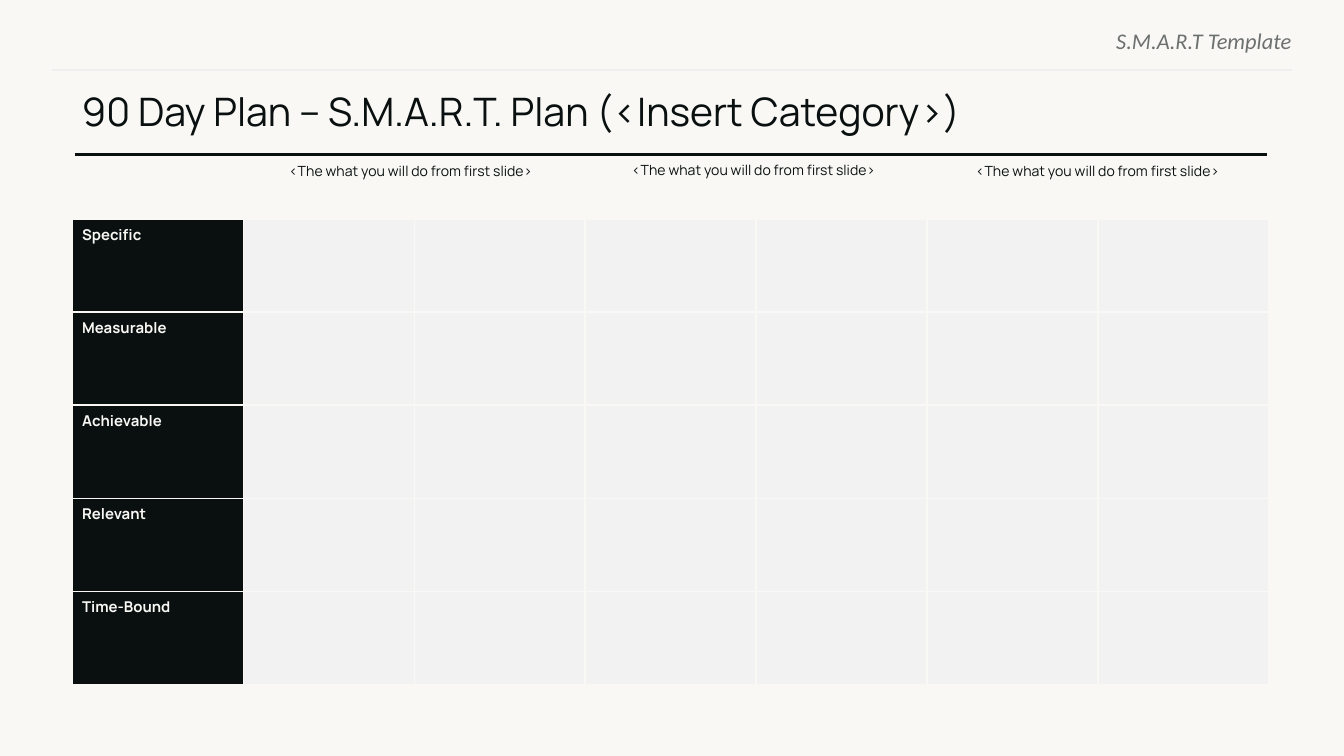
from lxml import etree
from pptx import Presentation
from pptx.dml.color import RGBColor
from pptx.enum.shapes import MSO_CONNECTOR
from pptx.enum.text import MSO_ANCHOR, PP_ALIGN
from pptx.oxml.ns import qn
from pptx.util import Cm, Pt

# Content
HEADER = "S.M.A.R.T Template"
TITLE = "90 Day Plan – S.M.A.R.T. Plan (<Insert Category>)"
GOAL = "<The what you will do from first slide>"
GOAL_BOXES = [  # left, top, width in cm
    (4.55, 2.95, 6.43),
    (10.97, 2.92, 6.55),
    (17.53, 2.95, 6.43),
]
CRITERIA = ["Specific", "Measurable", "Achievable", "Relevant", "Time-Bound"]

# Style
COLORS = {
    "paper": "F9F8F5",
    "ink": "09100F",
    "grey": "6C706F",
    "rule": "EFEFEF",
    "cell": "F2F2F2",
}
BODY_FONT, HEADER_FONT = "Manrope", "Calibri"
LEFT, CENTER, RIGHT = PP_ALIGN.LEFT, PP_ALIGN.CENTER, PP_ALIGN.RIGHT
TOP, MIDDLE = MSO_ANCHOR.TOP, MSO_ANCHOR.MIDDLE
STRAIGHT = MSO_CONNECTOR.STRAIGHT

# Table grid in cm
TABLE_LEFT, TABLE_TOP = 1.37, 4.14
COLUMN_COUNT, COLUMN_WIDTH, ROW_HEIGHT = 7, 3.23, 1.76


def color(name):
    return RGBColor.from_string(COLORS[name])


def style_text(paragraph, size, color_name, font=BODY_FONT, bold=False, italic=False):
    for run in paragraph.runs:
        run.font.name = font
        run.font.size = Pt(size)
        run.font.bold = bold
        run.font.italic = italic
        run.font.color.rgb = color(color_name)


def add_text(slide, text, box, size, color_name, insets=(0, 0), align=LEFT,
             anchor=TOP, spacing=None, **style):
    shape = slide.shapes.add_textbox(*[Cm(length) for length in box])
    frame = shape.text_frame
    frame.text = text
    frame.word_wrap = True
    frame.vertical_anchor = anchor
    frame.margin_left = frame.margin_right = Cm(insets[0])
    frame.margin_top = frame.margin_bottom = Cm(insets[1])
    paragraph = frame.paragraphs[0]
    paragraph.alignment = align
    paragraph.line_spacing = spacing
    style_text(paragraph, size, color_name, **style)


def add_rule(slide, left, right, top, color_name, width):
    line = slide.shapes.add_connector(STRAIGHT, Cm(left), Cm(top), Cm(right), Cm(top))
    line.line.color.rgb = color(color_name)
    line.line.width = Pt(width)
    etree.SubElement(line._element.spPr, qn("a:effectLst"))


def add_borders(cell, color_name, width):
    properties = cell._tc.get_or_add_tcPr()
    for position, side in enumerate(("a:lnL", "a:lnR", "a:lnT", "a:lnB")):
        border = etree.Element(qn(side), w=str(Pt(width)))
        fill = etree.SubElement(border, qn("a:solidFill"))
        etree.SubElement(fill, qn("a:srgbClr"), val=COLORS[color_name])
        properties.insert(position, border)


def add_plan_table(slide):
    table = slide.shapes.add_table(
        len(CRITERIA), COLUMN_COUNT, Cm(TABLE_LEFT), Cm(TABLE_TOP),
        Cm(COLUMN_COUNT * COLUMN_WIDTH), Cm(len(CRITERIA) * ROW_HEIGHT)).table
    table.first_row = False
    table.horz_banding = False
    table.first_col = True
    for column in table.columns:
        column.width = Cm(COLUMN_WIDTH)
    for row, criterion in zip(table.rows, CRITERIA):
        row.height = Cm(ROW_HEIGHT)
        for index, cell in enumerate(row.cells):
            cell.fill.solid()
            cell.fill.fore_color.rgb = color("cell" if index else "ink")
            cell.margin_left = cell.margin_right = Cm(0.18)
            cell.margin_top = cell.margin_bottom = Cm(0.1)
            add_borders(cell, "paper", 1)
        label = row.cells[0].text_frame
        label.text = criterion
        style_text(label.paragraphs[0], 8, "paper", bold=True)


def main():
    presentation = Presentation()
    presentation.slide_width = Cm(25.4)
    presentation.slide_height = Cm(14.29)
    slide = presentation.slides.add_slide(presentation.slide_layouts[6])
    slide.background.fill.solid()
    slide.background.fill.fore_color.rgb = color("paper")

    # Header strip
    add_rule(slide, 24.41, 0.99, 1.32, "rule", 0.75)
    add_text(slide, HEADER, (14.63, 0.51, 9.78, 0.46), 12, "grey",
             align=RIGHT, font=HEADER_FONT, italic=True)

    # Title and its underline
    add_text(slide, TITLE, (1.37, 0.76, 21.89, 2.77), 21, "ink",
             insets=(0.18, 0.1), anchor=MIDDLE, spacing=0.9)
    add_rule(slide, 1.42, 23.95, 2.92, "ink", 1.5)

    # Plan table with a goal above each pair of columns
    add_plan_table(slide)
    for left, top, width in GOAL_BOXES:
        add_text(slide, GOAL, (left, top, width, 0.58), 7.5, "ink",
                 insets=(0.25, 0.13), align=CENTER)

    presentation.save("out.pptx")


if __name__ == "__main__":
    main()
